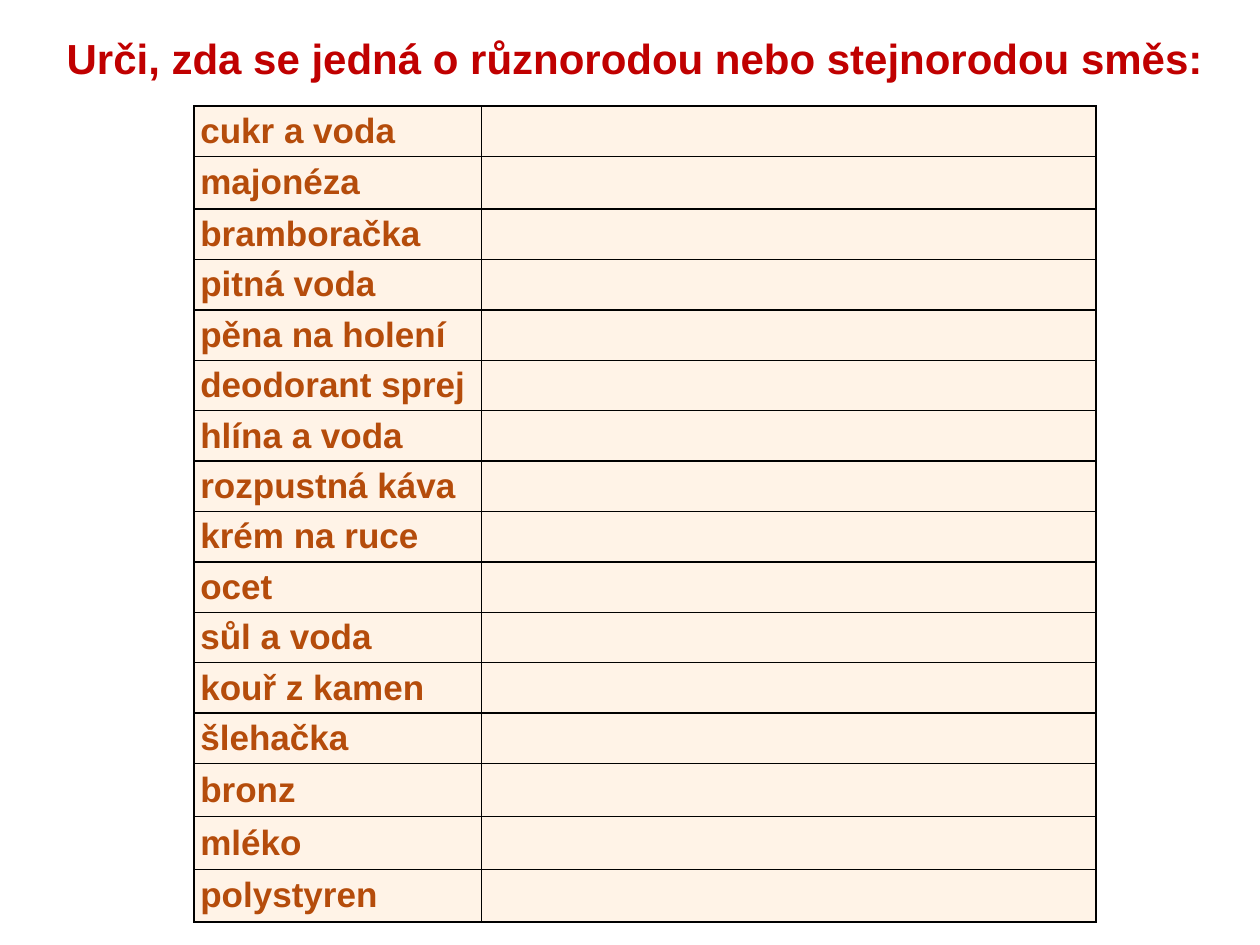
from dataclasses import dataclass

from lxml.etree import SubElement
from pptx import Presentation
from pptx.dml.color import RGBColor as RGB
from pptx.enum.text import MSO_ANCHOR as Anchor, MSO_AUTO_SIZE as AutoSize, PP_ALIGN as Align
from pptx.oxml.ns import qn
from pptx.util import Inches, Pt


@dataclass(frozen=True)
class Theme:
    font: str = "Arial"
    heading_color: str = "C00000"
    heading_size: int = 24
    mixture_color: str = "B54C0B"
    mixture_size: int = 20
    cell_fill: str = "FFF3E7"
    border_color: str = "000000"
    border_width: int = 1


THEME = Theme()

MIXTURES = [
    "cukr a voda", "majonéza", "bramboračka", "pitná voda",
    "pěna na holení", "deodorant sprej", "hlína a voda", "rozpustná káva",
    "krém na ruce", "ocet", "sůl a voda", "kouř z kamen",
    "šlehačka", "bronz", "mléko", "polystyren",
]
TALLER_ROWS = {"majonéza", "bronz", "mléko", "polystyren"}
COLUMN_WIDTHS = (2.28, 4.88)


def add_bold_run(paragraph, text, size, color):
    run = paragraph.add_run()
    run.text = text
    run.font.name = THEME.font
    run.font.size = Pt(size)
    run.font.bold = True
    run.font.color.rgb = RGB.from_string(color)


def add_heading(slide, text):
    heading = slide.shapes.add_textbox(Inches(0.43), Inches(0.21), Inches(9.29), Inches(0.5))
    frame = heading.text_frame
    frame.word_wrap = True
    frame.auto_size = AutoSize.SHAPE_TO_FIT_TEXT
    add_bold_run(frame.paragraphs[0], text, THEME.heading_size, THEME.heading_color)


def style_cell(cell):
    cell.margin_left = cell.margin_right = Inches(0.05)
    cell.margin_top = cell.margin_bottom = 0
    cell.vertical_anchor = Anchor.MIDDLE
    # Borders come before the fill in the cell properties
    properties = cell._tc.get_or_add_tcPr()
    for side in ("a:lnL", "a:lnR", "a:lnT", "a:lnB"):
        border = SubElement(properties, qn(side), w=str(Pt(THEME.border_width)))
        border_fill = SubElement(border, qn("a:solidFill"))
        SubElement(border_fill, qn("a:srgbClr"), val=THEME.border_color)
    cell.fill.solid()
    cell.fill.fore_color.rgb = RGB.from_string(THEME.cell_fill)


def add_worksheet(slide, mixtures):
    heights = [0.42 if mixture in TALLER_ROWS else 0.4 for mixture in mixtures]
    worksheet = slide.shapes.add_table(
        len(mixtures), len(COLUMN_WIDTHS), Inches(1.54), Inches(0.84),
        Inches(sum(COLUMN_WIDTHS)), Inches(sum(heights))).table
    worksheet.first_row = worksheet.horz_banding = False
    for column, width in zip(worksheet.columns, COLUMN_WIDTHS):
        column.width = Inches(width)
    for row, mixture, height in zip(worksheet.rows, mixtures, heights):
        row.height = Inches(height)
        for cell in row.cells:
            style_cell(cell)
        # The second column stays empty for the answer
        label = row.cells[0].text_frame.paragraphs[0]
        label.alignment = Align.JUSTIFY
        add_bold_run(label, mixture, THEME.mixture_size, THEME.mixture_color)


def main():
    deck = Presentation()
    deck.slide_width, deck.slide_height = Inches(10), Inches(7.5)
    slide = deck.slides.add_slide(deck.slide_layouts[6])
    add_worksheet(slide, MIXTURES)
    add_heading(slide, "Urči, zda se jedná o různorodou nebo stejnorodou směs:")
    deck.save("out.pptx")


if __name__ == "__main__":
    main()
